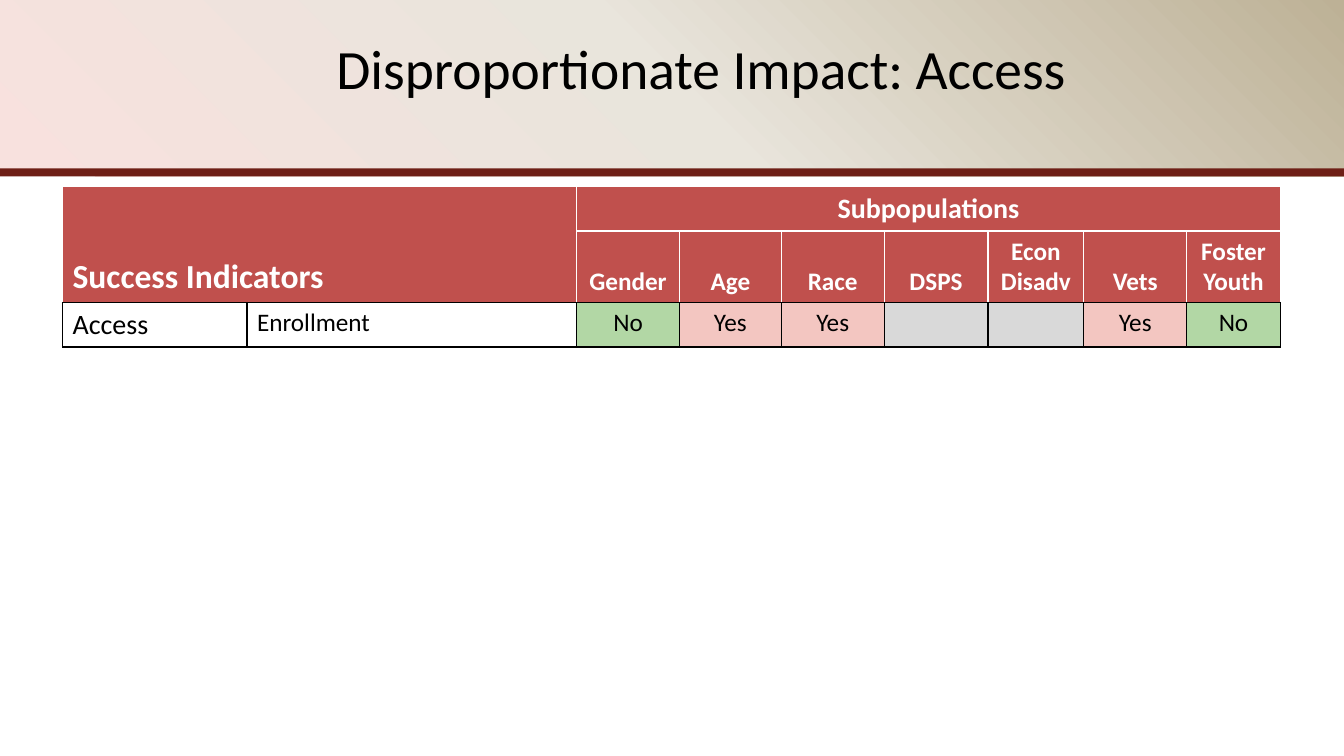
from lxml.etree import SubElement
from pptx import Presentation
from pptx.dml.color import RGBColor
from pptx.enum.shapes import MSO_SHAPE as Preset
from pptx.enum.text import MSO_ANCHOR as Anchor, PP_ALIGN as Align
from pptx.oxml import parse_xml
from pptx.oxml.ns import nsdecls, qn
from pptx.util import Inches, Pt

WHITE, BLACK = "FFFFFF", "000000"
HEADER, RULE = "C0504D", "6E1F16"
ANSWER_FILLS = {"No": "B2D7A5", "Yes": "F3C6C1", "": "D9D9D9"}
BAND_STOPS = [(0, "BDB196"), (50, "E9E5DC"), (100, "F8E1DE")]

COLUMN_SHARES = [13.73, 24.53, 7.65, 7.58, 7.65, 7.73, 7.13, 7.65, 6.98]
ROW_SHARES = [5.87, 9.47, 5.8]
FINDINGS = [
    ("Gender", "No"),
    ("Age", "Yes"),
    ("Race", "Yes"),
    ("DSPS", ""),
    ("Econ\nDisadv", ""),
    ("Vets", "Yes"),
    ("Foster Youth", "No"),
]


def color(value):
    return RGBColor.from_string(value)


class ImpactSlide:
    font = "Calibri"

    def __init__(self, deck):
        self.width, self.height = deck.slide_width, deck.slide_height
        self.slide = deck.slides.add_slide(deck.slide_layouts[5])

    def across(self, share):
        return round(self.width * share / 100)

    def down(self, share):
        return round(self.height * share / 100)

    def box(self, left, top, width, height):
        return self.across(left), self.down(top), self.across(width), self.down(height)

    def words(self, frame, text, size, ink, align, bold=False):
        frame.text = text
        for paragraph in frame.paragraphs:
            paragraph.alignment = align
            for run in paragraph.runs:
                run.font.name = self.font
                run.font.size = Pt(size)
                run.font.bold = bold
                run.font.color.rgb = color(ink)

    def bar(self, top, height, fill):
        bar = self.slide.shapes.add_shape(Preset.RECTANGLE, *self.box(0, top, 100, height))
        bar.shadow.inherit = False
        bar.fill.solid()
        bar.fill.fore_color.rgb = color(fill)
        bar.line.fill.background()
        return bar

    def glow_bar(self, top, height, stops):
        bar = self.bar(top, height, stops[0][1])
        marks = "".join(
            f'<a:gs pos="{share * 1000}"><a:srgbClr val="{tint}"/></a:gs>'
            for share, tint in stops
        )
        gradient = parse_xml(
            f'<a:gradFill {nsdecls("a")} rotWithShape="1"><a:gsLst>{marks}</a:gsLst>'
            '<a:path path="circle"><a:fillToRect l="100000" b="100000"/></a:path></a:gradFill>'
        )
        solid = bar.element.spPr.find(qn("a:solidFill"))
        solid.getparent().replace(solid, gradient)

    def title(self, text, left, top, width, height):
        title = self.slide.shapes.title
        title.left, title.top, title.width, title.height = self.box(left, top, width, height)
        title.text_frame.vertical_anchor = Anchor.MIDDLE
        self.words(title.text_frame, text, 39.6, BLACK, Align.CENTER)
        title.element.getparent().append(title.element)

    def table(self, left, top, columns, rows):
        place = self.box(left, top, sum(columns), sum(rows))
        table = self.slide.shapes.add_table(len(rows), len(columns), *place).table
        table.first_row = table.horz_banding = False
        for column, share in zip(table.columns, columns):
            column.width = self.across(share)
        for row, share in zip(table.rows, rows):
            row.height = self.down(share)
        return table

    def cell(self, cell, text, size, ink=BLACK, fill=None, align=Align.CENTER,
             anchor=Anchor.TOP, bold=False):
        self.words(cell.text_frame, text, size, ink, align, bold)
        cell.vertical_anchor = anchor
        if fill:
            cell.fill.solid()
            cell.fill.fore_color.rgb = color(fill)
        else:
            cell.fill.background()

    def borders(self, cell, side, bottom):
        properties = cell._tc.get_or_add_tcPr()
        edges = [("a:lnL", side), ("a:lnR", side), ("a:lnT", side), ("a:lnB", bottom)]
        for position, (edge, ink) in enumerate(edges):
            line = SubElement(properties, qn(edge), w=str(Pt(1)))
            solid = SubElement(line, qn("a:solidFill"))
            SubElement(solid, qn("a:srgbClr"), val=ink)
            properties.insert(position, line)


def main():
    deck = Presentation()
    deck.slide_width, deck.slide_height = Inches(13.33), Inches(7.5)
    page = ImpactSlide(deck)
    page.glow_bar(0, 23.33, BAND_STOPS)
    page.bar(22.27, 1.07, RULE)
    page.title("Disproportionate Impact: Access", 5.4, 6.93, 93.55, 4)

    impact = page.table(4.65, 24.67, COLUMN_SHARES, ROW_SHARES)
    heading = {"ink": WHITE, "fill": HEADER, "bold": True}
    impact.cell(0, 0).merge(impact.cell(1, 1))
    impact.cell(0, 2).merge(impact.cell(0, 8))
    page.cell(impact.cell(0, 0), "Success Indicators", 24,
              align=Align.LEFT, anchor=Anchor.BOTTOM, **heading)
    page.cell(impact.cell(0, 2), "Subpopulations", 20, **heading)
    page.cell(impact.cell(2, 0), "Access", 20, align=Align.LEFT, anchor=Anchor.MIDDLE)
    page.cell(impact.cell(2, 1), "Enrollment", 18, align=Align.LEFT)
    for column, (group, answer) in enumerate(FINDINGS, start=2):
        page.cell(impact.cell(1, column), group, 18, anchor=Anchor.BOTTOM, **heading)
        page.cell(impact.cell(2, column), answer, 18, fill=ANSWER_FILLS[answer])

    for row in range(len(ROW_SHARES)):
        for column in range(len(COLUMN_SHARES)):
            above_data = row == 1 or (row == 0 and column < 2)
            side = BLACK if row == 2 else WHITE
            page.borders(impact.cell(row, column), side, BLACK if above_data else side)

    deck.save("out.pptx")


if __name__ == "__main__":
    main()
